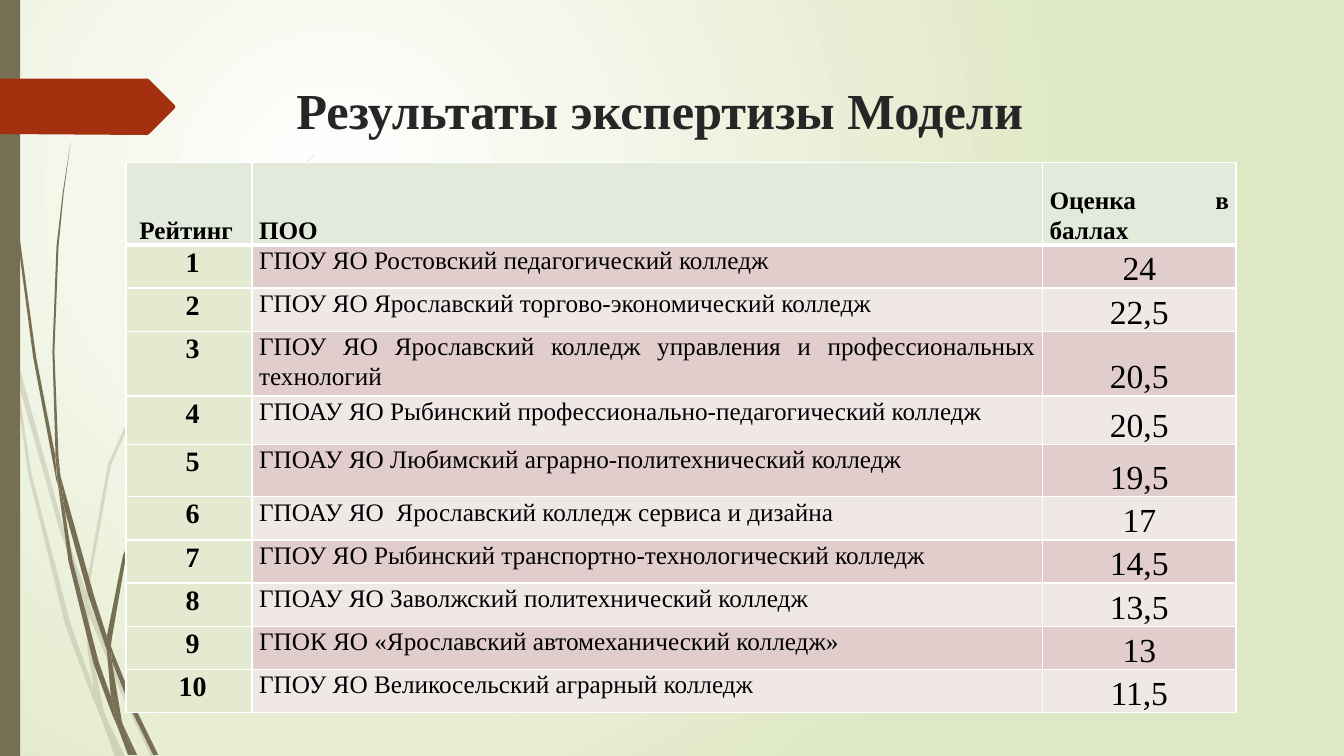
from lxml import etree
from pptx import Presentation
from pptx.dml.color import RGBColor
from pptx.enum.shapes import MSO_SHAPE
from pptx.enum.text import MSO_ANCHOR, PP_ALIGN
from pptx.oxml.ns import qn
from pptx.util import Pt

RECT = MSO_SHAPE.RECTANGLE
TOP, BOTTOM = MSO_ANCHOR.TOP, MSO_ANCHOR.BOTTOM
LEFT, CENTER, JUSTIFY = PP_ALIGN.LEFT, PP_ALIGN.CENTER, PP_ALIGN.JUSTIFY

PX = 9144  # EMU per px, 100 px to the inch
SLIDE_W, SLIDE_H = 1333, 750
FONT = "Times New Roman"
COLORS = {
    "white": "FFFFFF", "black": "000000", "title": "262626",
    "glow_edge": "DFE8C4", "grass": "766F54", "arrow": "A53010",
    "header": "E3E9DB", "rank": "E3EACF", "odd": "E1CDCC", "even": "F0E8E7",
}

# Content
TITLE = "Результаты экспертизы Модели"
HEADER = (" Рейтинг ", "ПОО", "Оценка в баллах ")
COLLEGES = [
    ("ГПОУ ЯО Ростовский педагогический колледж", "24"),
    ("ГПОУ ЯО Ярославский торгово-экономический колледж", "22,5"),
    ("ГПОУ ЯО Ярославский колледж управления и профессиональных технологий ", "20,5"),
    ("ГПОАУ ЯО Рыбинский профессионально-педагогический колледж", "20,5"),
    ("ГПОАУ ЯО Любимский аграрно-политехнический колледж", "19,5"),
    ("ГПОАУ ЯО  Ярославский колледж сервиса и дизайна ", "17"),
    ("ГПОУ ЯО Рыбинский транспортно-технологический колледж", "14,5"),
    ("ГПОАУ ЯО Заволжский политехнический колледж ", "13,5"),
    ("ГПОК ЯО «Ярославский автомеханический колледж»", "13"),
    ("ГПОУ ЯО Великосельский аграрный колледж ", "11,5"),
]
TABLE_LEFT, TABLE_TOP = 125, 161
COLUMN_WIDTHS = (125, 784, 192)
ROW_HEIGHTS = (82, 42, 42, 63, 48, 52, 42, 42, 42, 42, 42)

# Outlines of the grass blades and of the arrow, in px
FAINT_BLADES = [
    [(11, 350), (9, 322), (0, 282), (0, 299), (10, 344)],
    [(58, 522), (84, 599), (85, 586), (62, 520), (14, 345), (17, 376)],
    [(92, 607), (88, 596), (88, 610), (123, 694), (150, 751), (155, 751), (127, 692)],
    [(119, 751), (124, 751), (105, 711)],
    [(93, 683), (70, 619), (31, 469), (17, 376), (11, 350), (28, 470), (65, 621),
     (92, 693), (101, 714), (99, 707)],
    [(84, 599), (87, 646), (93, 683), (96, 692), (105, 711), (103, 706), (91, 646),
     (88, 610), (88, 608)],
    [(88, 584), (110, 462), (160, 349), (229, 245), (268, 198), (290, 175), (312, 154),
     (312, 153), (289, 175), (268, 197), (228, 244), (158, 348), (107, 461), (85, 584),
     (85, 586), (88, 596)],
    [(101, 714), (114, 751), (119, 751)],
    [(88, 608), (88, 610), (88, 596), (85, 586), (84, 599)],
    [(96, 692), (93, 683), (99, 707), (101, 714), (119, 751), (105, 711)],
]
DARK_BLADES = [
    [(7, 110), (17, 233), (33, 355), (56, 477), (57, 481), (55, 457), (55, 453),
     (36, 355), (19, 232), (8, 109), (5, 48), (4, 0), (3, 0), (4, 48)],
    [(88, 592), (106, 645), (106, 633), (106, 631), (93, 590), (60, 472), (64, 505)],
    [(113, 649), (110, 641), (111, 656), (132, 708), (152, 749), (157, 749), (136, 706)],
    [(110, 691), (98, 657), (72, 556), (64, 505), (57, 477), (68, 557), (93, 659),
     (111, 708), (117, 722), (116, 717)],
    [(60, 472), (58, 453), (54, 349), (58, 245), (63, 193), (70, 141), (62, 193),
     (56, 245), (52, 349), (55, 449)],
    [(133, 749), (136, 749), (122, 719)],
    [(57, 477), (64, 505), (60, 472), (55, 449), (55, 453)],
    [(111, 633), (125, 552), (158, 476), (205, 406), (231, 374), (245, 359), (261, 344),
     (260, 344), (245, 358), (231, 373), (204, 405), (156, 474), (122, 551), (106, 631),
     (110, 641)],
    [(117, 722), (127, 749), (131, 749)],
    [(106, 645), (110, 691), (116, 706), (122, 719), (121, 716), (111, 656), (109, 651)],
    [(106, 645), (109, 651), (111, 656), (110, 641), (106, 631), (106, 633)],
    [(116, 706), (110, 691), (116, 717), (117, 722), (130, 749), (133, 749), (122, 719)],
]
ARROW = [(0, 78), (146, 78), (148, 79), (173, 104), (174, 106), (173, 108),
         (148, 133), (146, 134), (0, 133)]


def rgb(name):
    return RGBColor.from_string(COLORS[name])


def paint(shape, color, alpha=None):
    shape.shadow.inherit = False
    shape.fill.solid()
    shape.fill.fore_color.rgb = rgb(color)
    if alpha:
        srgb = shape.element.find(".//" + qn("a:srgbClr"))
        etree.SubElement(srgb, qn("a:alpha"), val=str(alpha * 1000))
    shape.line.fill.background()


def draw_outline(shapes, points, color, alpha=None):
    builder = shapes.build_freeform(*points[0], scale=PX)
    builder.add_line_segments(points[1:], close=True)
    paint(builder.convert_to_shape(), color, alpha)


def write(frame, text, *, size, bold=False, color="black", align=LEFT, spacing=1.0):
    frame.word_wrap = True
    paragraph = frame.paragraphs[0]
    paragraph.alignment = align
    paragraph.line_spacing = spacing
    run = paragraph.add_run()
    run.text = text
    run.font.name = FONT
    run.font.size = Pt(size)
    run.font.bold = bold
    run.font.color.rgb = rgb(color)


def set_borders(cell, widths):
    properties = cell._tc.get_or_add_tcPr()
    for side, width in widths.items():
        line = etree.SubElement(properties, qn("a:ln" + side), w=str(Pt(width)))
        fill = etree.SubElement(line, qn("a:solidFill"))
        etree.SubElement(fill, qn("a:srgbClr"), val=COLORS["white"])


prs = Presentation()
prs.slide_width, prs.slide_height = SLIDE_W * PX, SLIDE_H * PX
slide = prs.slides.add_slide(prs.slide_layouts[6])

# Background glow
glow = slide.background.fill
glow.gradient()
for stop, color, position in zip(glow.gradient_stops, ("white", "glow_edge"), (0, 1)):
    stop.color.rgb = rgb(color)
    stop.position = position
linear = slide.element.find(".//" + qn("a:lin"))
circle = etree.Element(qn("a:path"), path="circle")
etree.SubElement(circle, qn("a:fillToRect"), l="50000", t="50000", r="100000", b="100000")
linear.getparent().replace(linear, circle)

# Grass, side bar and arrow
for blades, alpha in ((FAINT_BLADES, 20), (DARK_BLADES, None)):
    grass = slide.shapes.add_group_shape()
    for blade in blades:
        draw_outline(grass.shapes, blade, "grass", alpha)
side_bar = slide.shapes.add_shape(RECT, 0, 0, 20 * PX, SLIDE_H * PX)
paint(side_bar, "grass")
draw_outline(slide.shapes, ARROW, "arrow")

# Title
title = slide.shapes.add_textbox(284 * PX, 68 * PX, 975 * PX, 88 * PX).text_frame
title.margin_top = 10 * PX
write(title, TITLE, size=36, bold=True, color="title")

# Rating table
rating = slide.shapes.add_table(
    len(ROW_HEIGHTS), len(COLUMN_WIDTHS), TABLE_LEFT * PX, TABLE_TOP * PX,
    sum(COLUMN_WIDTHS) * PX, sum(ROW_HEIGHTS) * PX).table
rating.first_row = rating.horz_banding = False
for column, width in zip(rating.columns, COLUMN_WIDTHS):
    column.width = width * PX
for row, height in zip(rating.rows, ROW_HEIGHTS):
    row.height = height * PX

HEADER_STYLE = dict(size=18, bold=True, align=JUSTIFY)
BODY_STYLES = (dict(size=20, bold=True, align=CENTER),
               dict(size=18, align=JUSTIFY),
               dict(size=24, align=CENTER))
lines = [HEADER] + [(f" {rank}", *college) for rank, college in enumerate(COLLEGES, 1)]
for r, line in enumerate(lines):
    band = "odd" if r % 2 else "even"
    fills = ("rank", band, band) if r else ("header",) * 3
    for c, text in enumerate(line):
        cell = rating.cell(r, c)
        set_borders(cell, {"L": 1, "R": 1, "T": 3 if r == 1 else 1, "B": 1 if r else 3})
        cell.fill.solid()
        cell.fill.fore_color.rgb = rgb(fills[c])
        cell.margin_left = cell.margin_right = 7 * PX
        cell.margin_top = cell.margin_bottom = 0
        cell.vertical_anchor = BOTTOM if r == 0 or c == 2 else TOP
        style = BODY_STYLES[c] if r else HEADER_STYLE
        write(cell.text_frame, text, spacing=1.07, **style)

prs.save("out.pptx")
